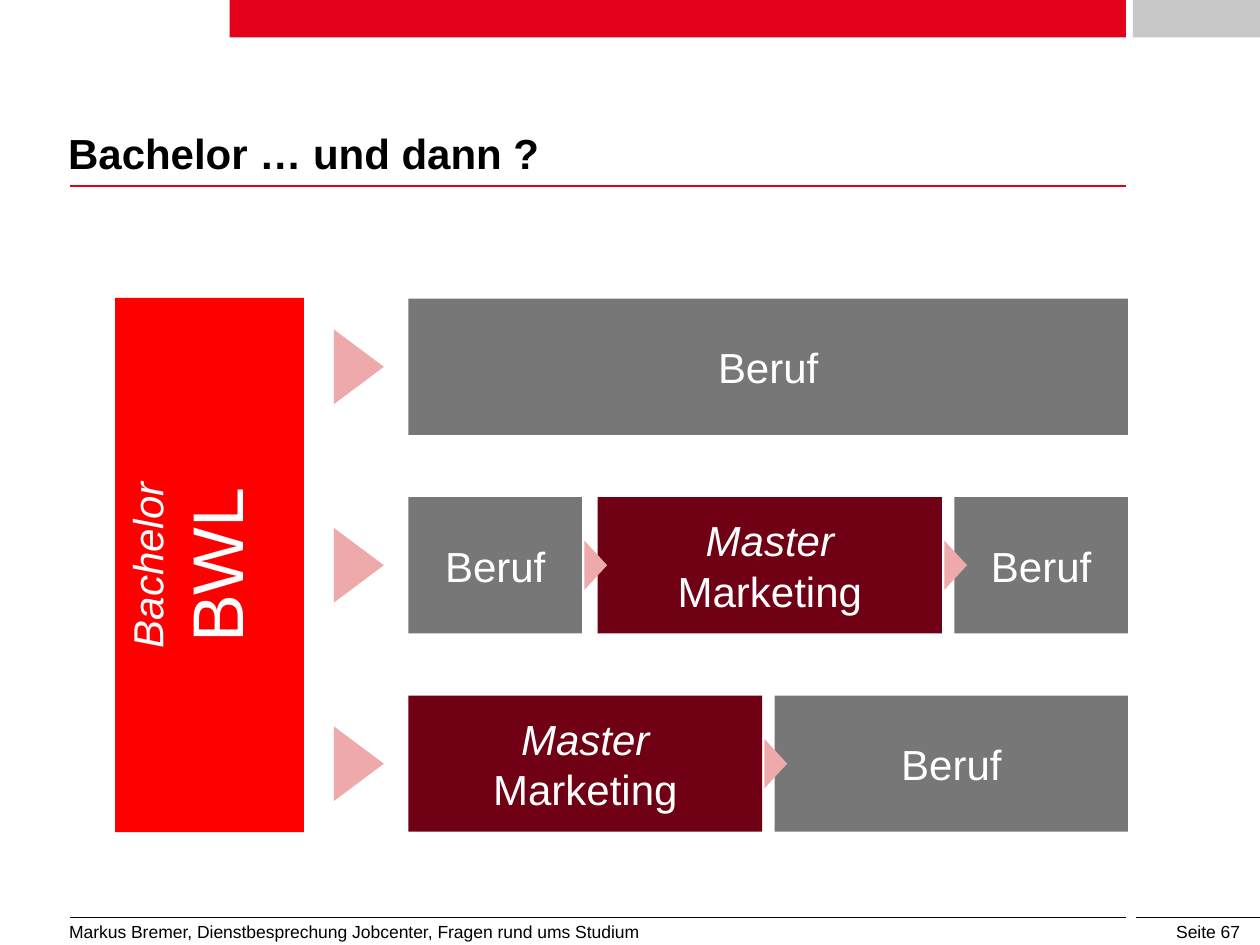
import pptx
import pptx.util
import pptx.dml.color
import pptx.enum.shapes
import pptx.enum.text
import lxml.etree

Pt = pptx.util.Pt
Color = pptx.dml.color.RGBColor
Shape = pptx.enum.shapes.MSO_SHAPE
Align = pptx.enum.text.PP_ALIGN
Anchor = pptx.enum.text.MSO_ANCHOR

CRIMSON = Color(0xE2, 0x00, 0x1A)
LIGHT_GRAY = Color(0xC8, 0xC8, 0xC8)
GRAY = Color(0x77, 0x77, 0x77)
MAROON = Color(0x70, 0x00, 0x13)
PINK = Color(0xEE, 0xAA, 0xAB)
RED = Color(0xFF, 0x00, 0x00)
BLACK = Color(0x00, 0x00, 0x00)
WHITE = Color(0xFF, 0xFF, 0xFF)


def add_filled(kind, left, top, width, height, color, rotation=0):
    shape = page.shapes.add_shape(kind, Pt(left), Pt(top), Pt(width), Pt(height))
    shape.shadow.inherit = False
    shape.fill.solid()
    shape.fill.fore_color.rgb = color
    shape.line.fill.background()
    shape.rotation = rotation
    return shape


def write(frame, lines, color, align):
    """Write one paragraph for each (text, size, bold, italic)."""
    frame.word_wrap = True
    for index, (text, size, bold, italic) in enumerate(lines):
        para = frame.add_paragraph() if index else frame.paragraphs[0]
        para.alignment = align
        span = para.add_run()
        span.text = text
        span.font.name = "Arial"
        span.font.size = Pt(size)
        span.font.bold = bold
        span.font.italic = italic
        span.font.color.rgb = color


deck = pptx.Presentation()
deck.slide_width = Pt(720)
deck.slide_height = Pt(540)
page = deck.slides.add_slide(deck.slide_layouts[5])

# Header bars, rules and footer
add_filled(Shape.RECTANGLE, 131.2, 0, 512.2, 21.4, CRIMSON)
add_filled(Shape.RECTANGLE, 647.4, 0, 72.6, 21.4, LIGHT_GRAY)
for start, end, y, color, weight in [
    (39.8, 643.4, 106.3, CRIMSON, 1.5),
    (40, 643.7, 524.3, BLACK, 0.5),
    (649.2, 720, 524.3, BLACK, 0.5),
]:
    rule = page.shapes.add_connector(
        pptx.enum.shapes.MSO_CONNECTOR.STRAIGHT, Pt(start), Pt(y), Pt(end), Pt(y))
    rule.line.color.rgb = color
    rule.line.width = Pt(weight)
    lxml.etree.SubElement(rule.element.spPr, pptx.oxml.ns.qn("a:effectLst"))

for text, left, width, height, align in [
    ("Seite 67", 612.7, 103, 13, Align.RIGHT),
    ("Markus Bremer, Dienstbesprechung Jobcenter, Fragen rund ums Studium",
     32.4, 605.5, 28, Align.LEFT),
]:
    box = page.shapes.add_textbox(Pt(left), Pt(522.7), Pt(width), Pt(height))
    write(box.text_frame, [(text, 10, False, False)], BLACK, align)

# Title
title = page.shapes.title
title.left, title.top, title.width, title.height = Pt(38.9), Pt(76.3), Pt(605.5), Pt(25.9)
frame = title.text_frame
frame.margin_left = frame.margin_right = frame.margin_top = frame.margin_bottom = 0
frame.vertical_anchor = Anchor.BOTTOM
write(frame, [("Bachelor … und dann ?", 24, True, False)], BLACK, Align.LEFT)
frame.paragraphs[0].line_spacing = 0.9

# Three career paths: each stage is (left, width, kind)
ROW_TOP, ROW_PITCH, ROW_HEIGHT = 170.7, 113.4, 77.8
STAGES = {
    "job": (GRAY, [("Beruf", 24, False, False)]),
    "master": (MAROON, [("Master", 24, False, True), ("Marketing", 24, False, False)]),
}
CAREERS = [
    [(233.4, 411.2, "job")],
    [(233.4, 99.2, "job"), (341.5, 196.8, "master"), (545.3, 99.3, "job")],
    [(233.4, 202.1, "master"), (442.7, 201.9, "job")],
]
for row, stages in enumerate(CAREERS):
    top = ROW_TOP + row * ROW_PITCH
    middle = top + ROW_HEIGHT / 2
    for left, width, kind in stages:
        color, lines = STAGES[kind]
        block = add_filled(Shape.RECTANGLE, left, top, width, ROW_HEIGHT, color)
        block.text_frame.vertical_anchor = Anchor.MIDDLE
        write(block.text_frame, lines, WHITE, Align.CENTER)

    # Arrowheads are upright triangles turned by 90 degrees: (centre, base, depth)
    arrows = [(205.1, 42.6, 28.5)]
    for left, width, kind in stages[:-1]:
        arrows.append((left + width + 7.8, 28.3, 13))
    for centre, base, depth in arrows:
        add_filled(Shape.ISOSCELES_TRIANGLE, centre - base / 2, middle - depth / 2,
                   base, depth, PINK, 90)

# Upright bachelor block
bachelor = add_filled(Shape.RECTANGLE, -32.9, 268.9, 305.3, 108, RED, 270)
bachelor.text_frame.vertical_anchor = Anchor.TOP
write(bachelor.text_frame, [("Bachelor", 24, False, True), ("BWL", 41, False, False)],
      WHITE, Align.CENTER)

deck.save("out.pptx")
